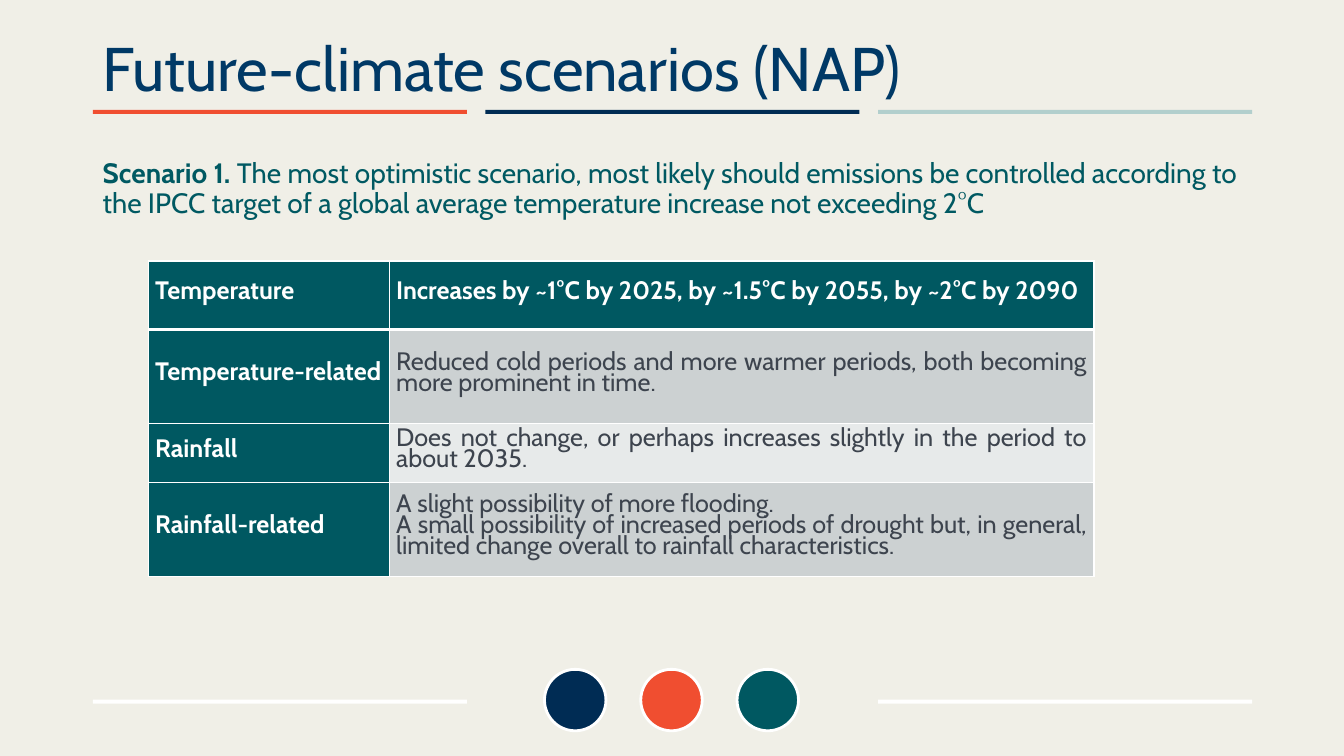
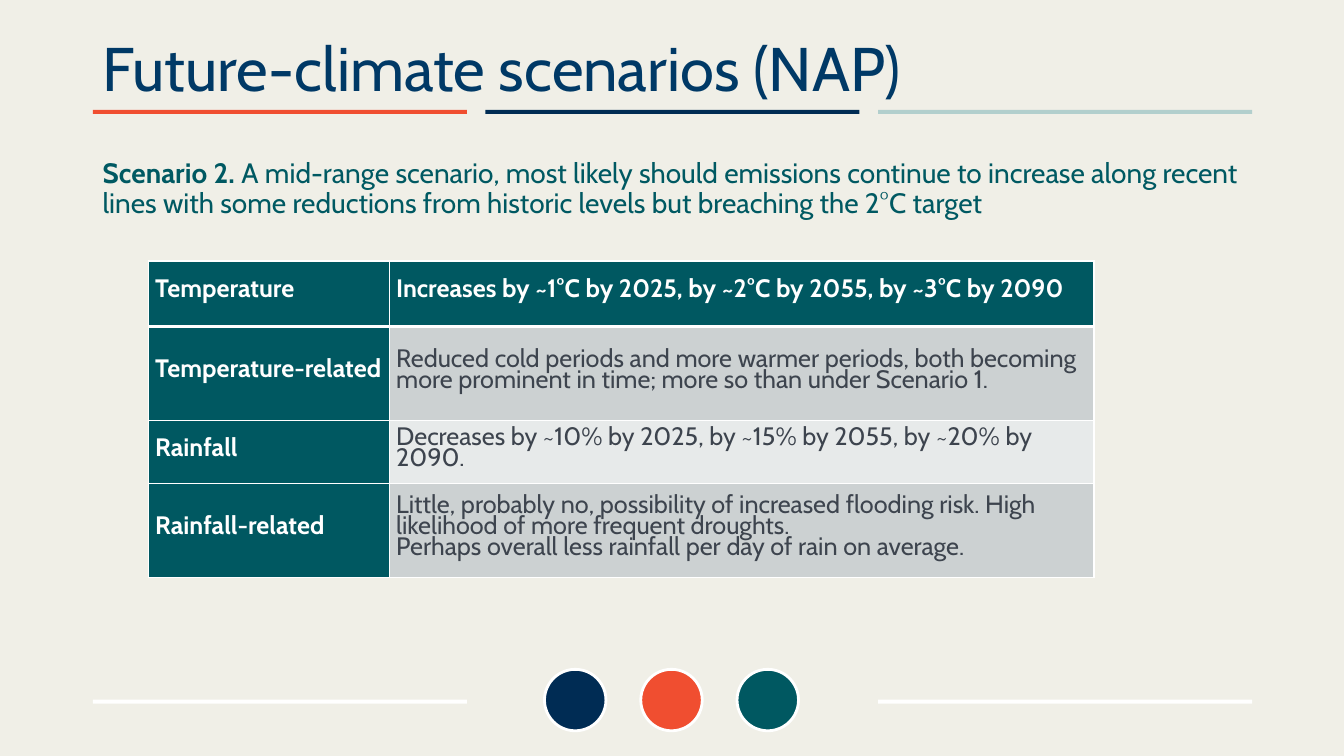
from dataclasses import dataclass

from lxml import etree
from pptx import Presentation
from pptx.dml.color import RGBColor
from pptx.enum.shapes import MSO_SHAPE as Preset
from pptx.enum.text import MSO_ANCHOR as Anchor, PP_ALIGN as Align
from pptx.oxml.ns import qn
from pptx.presentation import Presentation as Deck
from pptx.slide import Slide
from pptx.table import _Cell as Cell
from pptx.text.text import _Paragraph as Paragraph
from pptx.util import Inches, Pt

CREAM = RGBColor(0xF0, 0xEF, 0xE7)
ORANGE = RGBColor(0xF0, 0x4E, 0x30)
NAVY = RGBColor(0x00, 0x2C, 0x54)
MINT = RGBColor(0xB2, 0xCF, 0xCD)
TEAL = RGBColor(0x00, 0x58, 0x61)
TITLE_BLUE = RGBColor(0x00, 0x39, 0x66)
LEAD_TEAL = RGBColor(0x00, 0x59, 0x62)
WHITE = RGBColor(0xFF, 0xFF, 0xFF)
SLATE = RGBColor(0x3D, 0x44, 0x4E)
BAND_DARK = RGBColor(0xCC, 0xD1, 0xD2)
BAND_LIGHT = RGBColor(0xE7, 0xEA, 0xEA)

FONT = "Cabin"
TITLE = "Future-climate scenarios (NAP)"
MARGIN = 0.92
CONTENT_WIDTH = 11.5
BAR_WIDTH = 3.71
BAR_STEP = 3.895
DOT_SIZE = 0.61
DOT_LEFT = 5.4
DOT_STEP = 0.955
TABLE_LEFT = 1.47
TABLE_TOP = 2.59
COLUMN_WIDTHS = (2.39, 6.99)
ROW_LABELS = ("Temperature", "Temperature-related", "Rainfall", "Rainfall-related")


@dataclass(frozen=True)
class Scenario:
    label: str
    summary: str
    row_heights: tuple[float, ...]
    effects: tuple[tuple[str, ...], ...]
    effect_align: Align


SCENARIOS = (
    Scenario(
        "Scenario 1.",
        "The most optimistic scenario, most likely should emissions be controlled according to "
        "the IPCC target of a global average temperature increase not exceeding 2°C",
        (0.68, 0.93, 0.59, 0.93),
        (
            ("Increases by ~1°C by 2025, by ~1.5°C by 2055, by ~2°C by 2090",),
            ("Reduced cold periods and more warmer periods, both becoming more prominent in time.",),
            ("Does not change, or perhaps increases slightly in the period to about 2035.",),
            (
                "A slight possibility of more flooding.",
                "A small possibility of increased periods of drought but, in general, "
                "limited change overall to rainfall characteristics.",
            ),
        ),
        Align.JUSTIFY,
    ),
    Scenario(
        "Scenario 2.",
        "A mid-range scenario, most likely should emissions continue to increase along recent "
        "lines with some reductions from historic levels but breaching the 2°C target",
        (0.65, 0.93, 0.63, 0.93),
        (
            ("Increases by ~1°C by 2025, by ~2°C by 2055, by ~3°C by 2090",),
            (
                "Reduced cold periods and more warmer periods, both becoming more prominent "
                "in time; more so than under Scenario 1.",
            ),
            ("Decreases by ~10% by 2025, by ~15% by 2055, by ~20% by 2090.",),
            (
                "Little, probably no, possibility of increased flooding risk. "
                "High likelihood of more frequent droughts.",
                "Perhaps overall less rainfall per day of rain on average.",
            ),
        ),
        Align.LEFT,
    ),
)


def add_run(paragraph: Paragraph, text: str, size: float, color: RGBColor, bold: bool = False) -> None:
    run = paragraph.add_run()
    run.text = text
    run.font.name = FONT
    run.font.size = Pt(size)
    run.font.bold = bold
    run.font.color.rgb = color


def add_text_box(slide: Slide, top: float, height: float, anchor: Anchor) -> Paragraph:
    box = slide.shapes.add_textbox(Inches(MARGIN), Inches(top), Inches(CONTENT_WIDTH), Inches(height))
    frame = box.text_frame
    frame.word_wrap = True
    frame.vertical_anchor = anchor
    paragraph = frame.paragraphs[0]
    paragraph.line_spacing = 0.9
    return paragraph


def add_bar(slide: Slide, position: int, top: float, color: RGBColor) -> None:
    left = MARGIN + position * BAR_STEP
    shape = slide.shapes.add_shape(
        Preset.RECTANGLE, Inches(left), Inches(top), Inches(BAR_WIDTH), Inches(0.04)
    )
    shape.shadow.inherit = False
    shape.fill.solid()
    shape.fill.fore_color.rgb = color
    shape.line.fill.background()


def add_dot(slide: Slide, position: int, color: RGBColor) -> None:
    left = DOT_LEFT + position * DOT_STEP
    shape = slide.shapes.add_shape(
        Preset.OVAL, Inches(left), Inches(6.64), Inches(DOT_SIZE), Inches(DOT_SIZE)
    )
    shape.shadow.inherit = False
    shape.fill.solid()
    shape.fill.fore_color.rgb = color
    shape.line.color.rgb = WHITE
    shape.line.width = Pt(2)


def add_frame(slide: Slide) -> None:
    for position, color in enumerate((ORANGE, NAVY, MINT)):
        add_bar(slide, position, 1.09, color)
    for position, color in enumerate((NAVY, ORANGE, TEAL)):
        add_dot(slide, position, color)
    for position in (0, 2):
        add_bar(slide, position, 6.94, WHITE)
    add_run(add_text_box(slide, 0.11, 1.2, Anchor.MIDDLE), TITLE, 44, TITLE_BLUE)


def set_borders(cell: Cell, top: float, bottom: float) -> None:
    properties = cell._tc.get_or_add_tcPr()
    for side, width in (("L", 1), ("R", 1), ("T", top), ("B", bottom)):
        line = etree.SubElement(properties, qn(f"a:ln{side}"), w=str(Pt(width)))
        fill = etree.SubElement(line, qn("a:solidFill"))
        etree.SubElement(fill, qn("a:srgbClr"), val=str(WHITE))


def fill_cell(
    cell: Cell, texts: tuple[str, ...], fill: RGBColor, color: RGBColor, bold: bool, align: Align
) -> None:
    cell.fill.solid()
    cell.fill.fore_color.rgb = fill
    cell.vertical_anchor = Anchor.MIDDLE
    cell.margin_left = cell.margin_right = Inches(0.07)
    cell.margin_top = cell.margin_bottom = 0
    frame = cell.text_frame
    for index, text in enumerate(texts):
        paragraph = frame.add_paragraph() if index else frame.paragraphs[0]
        paragraph.alignment = align
        paragraph.line_spacing = Pt(15)
        add_run(paragraph, text, 18, color, bold)


def add_effects_table(slide: Slide, scenario: Scenario) -> None:
    table = slide.shapes.add_table(
        len(ROW_LABELS), len(COLUMN_WIDTHS), Inches(TABLE_LEFT), Inches(TABLE_TOP),
        Inches(sum(COLUMN_WIDTHS)), Inches(sum(scenario.row_heights)),
    ).table
    table.horz_banding = False
    for column, width in zip(table.columns, COLUMN_WIDTHS):
        column.width = Inches(width)
    rows = zip(table.rows, scenario.row_heights, ROW_LABELS, scenario.effects)
    for index, (row, height, label, effect) in enumerate(rows):
        row.height = Inches(height)
        is_header = index == 0
        for cell in row.cells:
            set_borders(cell, 3 if index == 1 else 1, 3 if is_header else 1)
        label_cell, effect_cell = row.cells
        label_align = Align.LEFT if is_header else Align.JUSTIFY
        fill_cell(label_cell, (label,), TEAL, WHITE, True, label_align)
        if is_header:
            fill_cell(effect_cell, effect, TEAL, WHITE, True, Align.LEFT)
        else:
            band = BAND_DARK if index % 2 else BAND_LIGHT
            fill_cell(effect_cell, effect, band, SLATE, False, scenario.effect_align)


def add_scenario_slide(presentation: Deck, scenario: Scenario) -> None:
    slide = presentation.slides.add_slide(presentation.slide_layouts[6])
    slide.background.fill.solid()
    slide.background.fill.fore_color.rgb = CREAM
    add_frame(slide)
    lead = add_text_box(slide, 1.53, 0.9, Anchor.TOP)
    add_run(lead, f"{scenario.label} ", 20, LEAD_TEAL, True)
    add_run(lead, scenario.summary, 20, LEAD_TEAL)
    add_effects_table(slide, scenario)


def main() -> None:
    presentation = Presentation()
    presentation.slide_width = Inches(13.33)
    presentation.slide_height = Inches(7.5)
    for scenario in SCENARIOS:
        add_scenario_slide(presentation, scenario)
    presentation.save("out.pptx")


if __name__ == "__main__":
    main()
